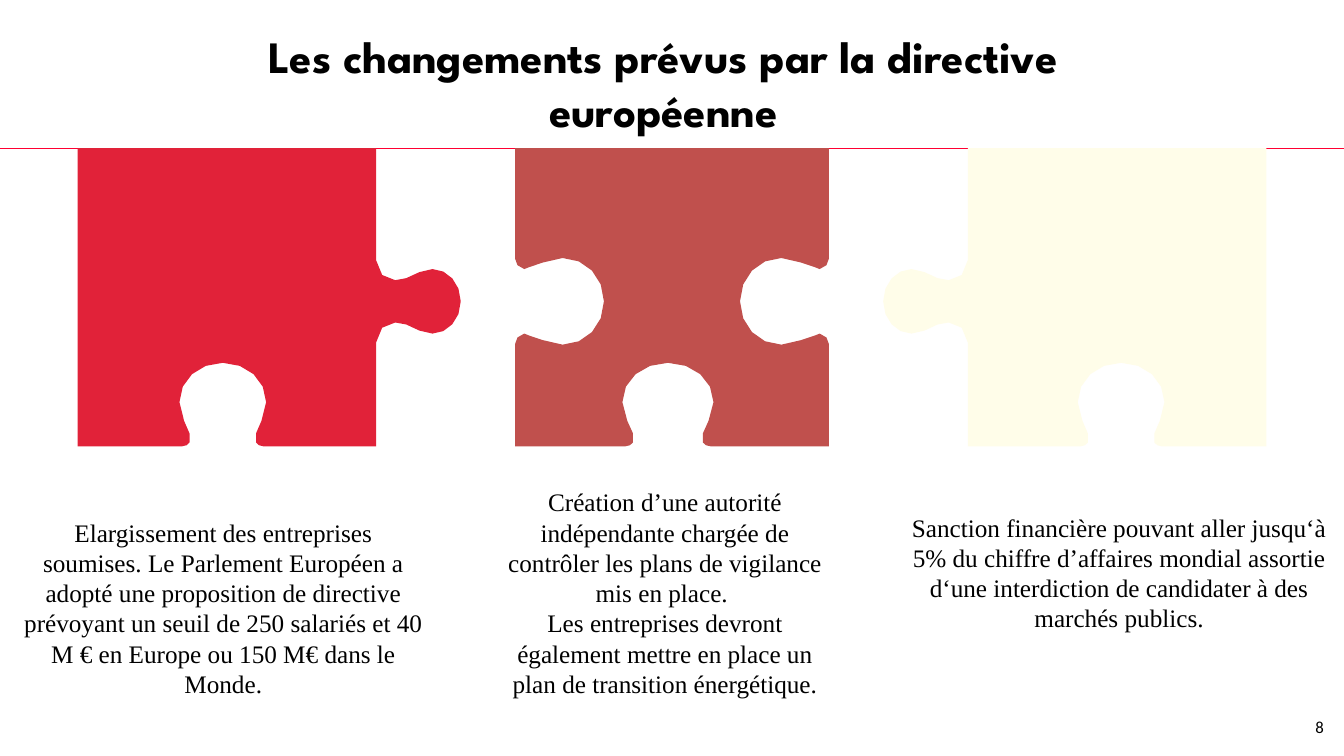
from lxml import etree
from pptx import Presentation
from pptx import util as u
from pptx.dml.color import RGBColor
from pptx.enum import shapes, text
from pptx.oxml.ns import qn

BLACK = RGBColor(0x00, 0x00, 0x00)
RULE_RED = RGBColor(0xFF, 0x00, 0x32)
RED = RGBColor(0xE1, 0x22, 0x39)
BRICK = RGBColor(0xC0, 0x50, 0x4D)
CREAM = RGBColor(0xFF, 0xFD, 0xE9)

TITLE_FONT = {"name": "League Spartan", "size": u.Pt(32), "bold": True}
BODY_FONT = {"name": "Times New Roman", "size": u.Pt(18)}
NUMBER_FONT = {"name": "Calibri", "size": u.Pt(12)}

PIECE_TOP, PIECE_HEIGHT = 1.47, 2.96
SIDE_MIDDLE = 1.52

CURVE_STEPS = (2, 1, 2, 4)
TAB = [(-0.41, 0), (-0.28, 0.01), (-0.21, 0.09), (-0.21, 0.19),
       (-0.21, 0.22), (-0.22, 0.26), (-0.23, 0.3),
       (-0.27, 0.36), (-0.32, 0.5), (-0.32, 0.56),
       (-0.32, 0.71), (-0.18, 0.84), (0, 0.84)]
SIDE_SOCKET = [(-0.42, 0), (-0.39, -0.01), (-0.32, -0.02), (-0.32, -0.09),
               (-0.32, -0.11), (-0.33, -0.12), (-0.34, -0.14),
               (-0.34, -0.17), (-0.43, -0.36), (-0.43, -0.47),
               (-0.43, -0.7), (-0.24, -0.88), (0, -0.88)]
BOTTOM_SOCKET = [(-0.41, 0), (-0.37, 0), (-0.34, -0.02), (-0.33, -0.04),
                 (-0.31, -0.07), (-0.32, -0.11), (-0.33, -0.13),
                 (-0.34, -0.15), (-0.43, -0.34), (-0.43, -0.44),
                 (-0.43, -0.66), (-0.24, -0.83), (0, -0.83)]

PIECES = [
    (0.77, 2.96, -0.04, None, TAB, RED, (0.13, 5.08, 4.17, 1.62),
     ["Elargissement des entreprises soumises. Le Parlement Européen a adopté "
      "une proposition de directive prévoyant un seuil de 250 salariés et "
      "40 M € en Europe ou 150 M€ dans le Monde."]),
    (5.11, 3.11, -0.04, SIDE_SOCKET, SIDE_SOCKET, BRICK, (4.87, 4.78, 3.45, 2.22),
     ["Création d’une autorité indépendante chargée de contrôler les plans "
      "de vigilance mis en place. ",
      "Les entreprises devront également mettre en place un plan de "
      "transition énergétique."]),
    (9.6, 2.96, 0.04, TAB, None, CREAM, (8.87, 5.03, 4.46, 1.31),
     ["Sanction financière pouvant aller jusqu‘à 5% du chiffre d’affaires "
      "mondial assortie d‘une interdiction de candidater à des marchés publics."]),
]


def bezier(points, t):
    weights = ((1 - t) ** 3, 3 * t * (1 - t) ** 2, 3 * t * t * (1 - t), t ** 3)
    return tuple(sum(w * p[axis] for w, p in zip(weights, points)) for axis in (0, 1))


def edge_profile(half):
    if half is None:
        return []
    curve = [half[0]]
    for index, steps in enumerate(CURVE_STEPS):
        controls = half[3 * index:3 * index + 4]
        curve += [bezier(controls, step / steps) for step in range(1, steps + 1)]
    return curve + [(-along, out) for along, out in reversed(curve[:-1])]


def format_text(frame, paragraphs, align, font):
    frame.word_wrap = True
    for index, words in enumerate(paragraphs):
        paragraph = frame.paragraphs[0] if index == 0 else frame.add_paragraph()
        paragraph.text = words
        paragraph.alignment = align
        for attribute, value in font.items():
            setattr(paragraph.font, attribute, value)
        paragraph.font.color.rgb = BLACK


def add_text(slide, box, paragraphs, align, font):
    frame = slide.shapes.add_textbox(*map(u.Inches, box)).text_frame
    format_text(frame, paragraphs, align, font)


def add_header(slide, left, top, width, height):
    rule = slide.shapes.add_connector(
        shapes.MSO_CONNECTOR.STRAIGHT,
        0, u.Inches(PIECE_TOP), u.Inches(13.33), u.Inches(PIECE_TOP))
    rule.line.color.rgb = RULE_RED
    rule.line.width = u.Pt(0.75)
    etree.SubElement(rule._element.spPr, qn("a:effectLst"))

    title = slide.shapes.title
    title.left, title.top, title.width, title.height = map(
        u.Inches, (left, top, width, height))
    frame = title.text_frame
    frame.auto_size = text.MSO_AUTO_SIZE.NONE
    frame.vertical_anchor = text.MSO_ANCHOR.MIDDLE
    format_text(frame, ["Les changements prévus par la directive européenne"],
                text.PP_ALIGN.CENTER, TITLE_FONT)


def add_piece(slide, left, top, width, height, socket_shift, left_half, right_half, color):
    right, bottom, middle = left + width, top + height, top + SIDE_MIDDLE
    center = left + width / 2 + socket_shift
    stretch = width / height
    outline = [(left, top), (right, top)]
    outline += [(right + out, middle + along) for along, out in edge_profile(right_half)]
    outline.append((right, bottom))
    outline += [(center - along * stretch, bottom + out)
                for along, out in edge_profile(BOTTOM_SOCKET)]
    outline.append((left, bottom))
    outline += [(left - out, middle - along) for along, out in edge_profile(left_half)]

    corners = [(u.Inches(x), u.Inches(y)) for x, y in outline]
    builder = slide.shapes.build_freeform(*corners[0])
    builder.add_line_segments(corners[1:], close=True)
    piece = builder.convert_to_shape()
    piece.shadow.inherit = False
    piece.fill.solid()
    piece.fill.fore_color.rgb = color
    piece.line.fill.background()


def main():
    deck = Presentation()
    deck.slide_width, deck.slide_height = u.Inches(13.33), u.Inches(7.5)
    slide = deck.slides.add_slide(deck.slide_layouts[5])
    add_header(slide, 1.7, 0.33, 9.76, 0.98)
    for left, width, shift, left_half, right_half, color, box, paragraphs in PIECES:
        add_piece(slide, left, PIECE_TOP, width, PIECE_HEIGHT,
                  shift, left_half, right_half, color)
        add_text(slide, box, paragraphs, text.PP_ALIGN.CENTER, BODY_FONT)
    add_text(slide, (10.45, 7.06, 2.78, 0.5), ["8"], text.PP_ALIGN.RIGHT, NUMBER_FONT)
    deck.save("out.pptx")


if __name__ == "__main__":
    main()
